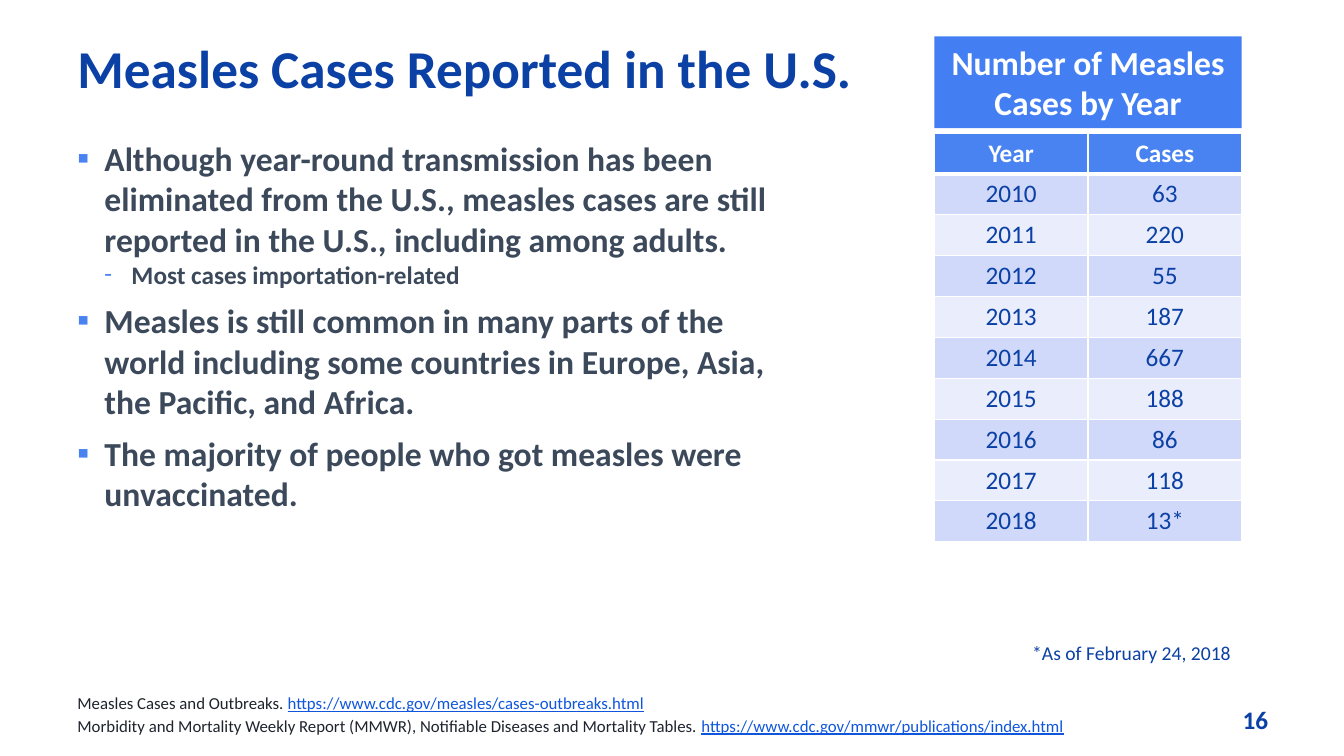
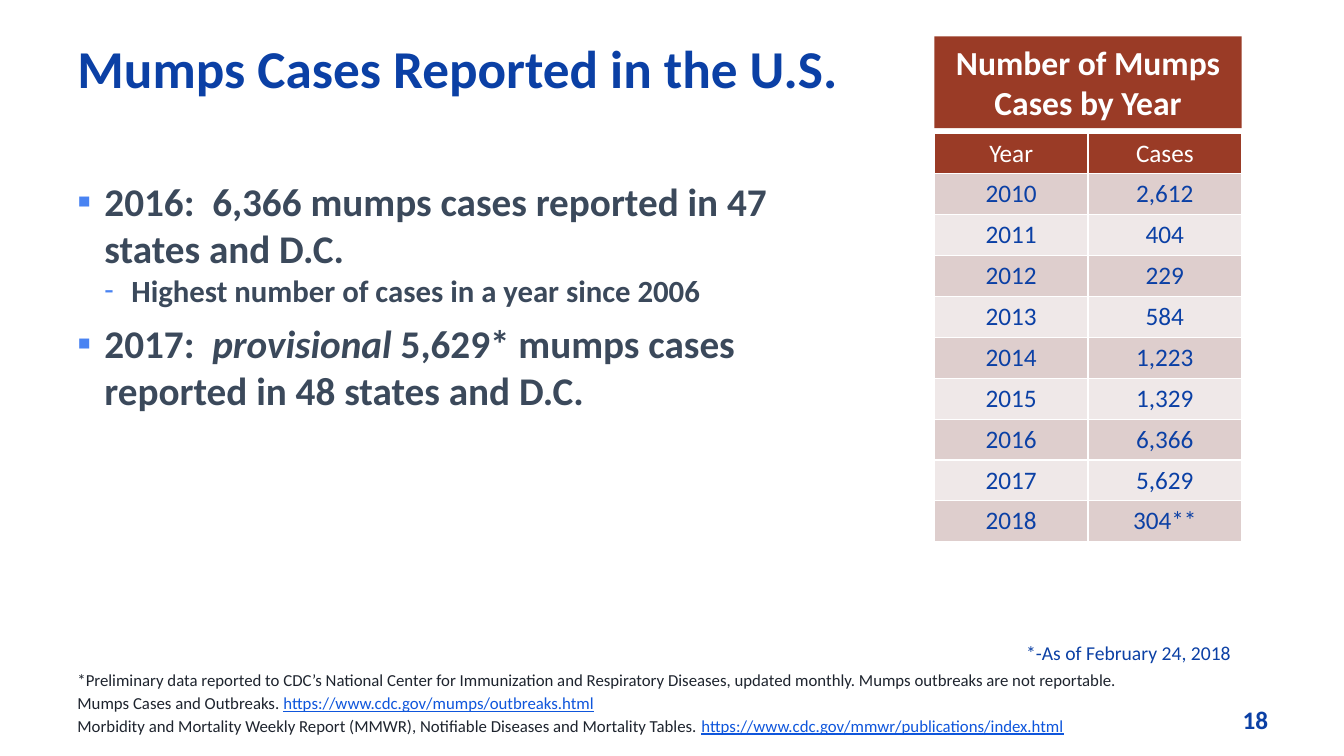
from dataclasses import dataclass

from lxml.etree import SubElement
from pptx import Presentation
from pptx.dml.color import RGBColor
from pptx.enum.shapes import MSO_SHAPE
from pptx.enum.text import MSO_ANCHOR, PP_ALIGN
from pptx.oxml import parse_xml
from pptx.oxml.ns import nsdecls, qn
from pptx.util import Pt

FONT = "Calibri"
WHITE = "FFFFFF"
NAVY = "0B40A5"
SLATE = "3B495B"
INK = "1E242E"
LINK = "0F56DC"
BULLET = "4983F2"

LEFT = 48.25
TABLE_LEFT, TABLE_TOP, TABLE_WIDTH, ROW_HEIGHT = 667.4, 95, 219.6, 29.2
BODY_BOTTOM = 459
INDENT = 19.3
FIRST_YEAR = 2010


@dataclass(frozen=True)
class Run:
    text: str
    italic: bool = False
    link: bool = False


@dataclass(frozen=True)
class Bullet:
    runs: tuple[Run, ...]
    size: float
    level: int = 0


@dataclass(frozen=True)
class TablePalette:
    banner: str
    header: str
    odd_row: str
    even_row: str
    header_bold: bool
    header_rule: float


@dataclass(frozen=True)
class DiseaseSlide:
    title: str
    body_top: float
    bullets: tuple[Bullet, ...]
    banner: str
    cases: tuple[str, ...]
    palette: TablePalette
    date_note: str
    sources: tuple[tuple[Run, ...], ...]
    number: int


def rgb(value: str) -> RGBColor:
    return RGBColor.from_string(value)


def write(paragraph, *runs: Run, size: float, color: str, bold=False,
          align=PP_ALIGN.LEFT, before: float = 0) -> None:
    """Fill a paragraph with runs; link runs are underlined in the link colour."""
    paragraph.alignment = align
    paragraph.space_before = Pt(before)
    for item in runs:
        run = paragraph.add_run()
        run.text = item.text
        font = run.font
        font.name, font.size = FONT, Pt(size)
        font.bold, font.italic, font.underline = bold, item.italic, item.link
        font.color.rgb = rgb(LINK if item.link else color)


def add_frame(slide, left: float, top: float, width: float, height: float,
              anchor=MSO_ANCHOR.TOP):
    box = slide.shapes.add_textbox(Pt(left), Pt(top), Pt(width), Pt(height))
    frame = box.text_frame
    frame.word_wrap = True
    frame.vertical_anchor = anchor
    return frame


def paragraph_at(frame, index: int):
    return frame.add_paragraph() if index else frame.paragraphs[0]


def set_bullet(paragraph, level: int) -> None:
    properties = paragraph._p.get_or_add_pPr()
    properties.set("marL", str(Pt(INDENT * (level + 1))))
    properties.set("indent", str(Pt(-INDENT)))
    color = SubElement(properties, qn("a:buClr"))
    SubElement(color, qn("a:srgbClr")).set("val", BULLET)
    SubElement(properties, qn("a:buFont")).set("typeface", FONT)
    SubElement(properties, qn("a:buChar")).set("char", "-" if level else "▪")


def add_bullets(slide, top: float, bullets: tuple[Bullet, ...]) -> None:
    frame = add_frame(slide, LEFT, top, 532.8, BODY_BOTTOM - top)
    for index, bullet in enumerate(bullets):
        paragraph = paragraph_at(frame, index)
        set_bullet(paragraph, bullet.level)
        paragraph.level = bullet.level
        before = 8 if index and not bullet.level else 0
        write(paragraph, *bullet.runs, size=bullet.size, color=SLATE,
              bold=True, before=before)


def add_sources(slide, sources: tuple[tuple[Run, ...], ...]) -> None:
    frame = add_frame(slide, LEFT, 486, 864, 43.2, MSO_ANCHOR.BOTTOM)
    for index, runs in enumerate(sources):
        write(paragraph_at(frame, index), *runs, size=12, color=INK,
              before=2 if index else 0)


def set_borders(cell, top: float, bottom: float) -> None:
    properties = cell._tc.get_or_add_tcPr()
    widths = {"lnL": 1, "lnR": 1, "lnT": top, "lnB": bottom}
    for position, (side, width) in enumerate(widths.items()):
        properties.insert(position, parse_xml(
            f'<a:{side} {nsdecls("a")} w="{Pt(width)}"><a:solidFill>'
            f'<a:srgbClr val="{WHITE}"/></a:solidFill></a:{side}>'))


def add_case_table(slide, cases: tuple[str, ...], palette: TablePalette) -> None:
    rows = [("Year", "Cases")]
    rows += [(str(FIRST_YEAR + index), count) for index, count in enumerate(cases)]
    table = slide.shapes.add_table(
        len(rows), 2, Pt(TABLE_LEFT), Pt(TABLE_TOP), Pt(TABLE_WIDTH),
        Pt(ROW_HEIGHT * len(rows))).table
    for row_index, values in enumerate(rows):
        table.rows[row_index].height = Pt(ROW_HEIGHT)
        is_header = row_index == 0
        band = palette.odd_row if row_index % 2 else palette.even_row
        for column_index, value in enumerate(values):
            cell = table.cell(row_index, column_index)
            cell.fill.solid()
            cell.fill.fore_color.rgb = rgb(palette.header if is_header else band)
            set_borders(cell,
                        top=palette.header_rule if row_index == 1 else 1,
                        bottom=palette.header_rule if is_header else 1)
            write(cell.text_frame.paragraphs[0], Run(value), size=18,
                  color=WHITE if is_header else NAVY,
                  bold=is_header and palette.header_bold,
                  align=PP_ALIGN.CENTER)


def add_banner(slide, text: str, fill: str) -> None:
    shape = slide.shapes.add_shape(MSO_SHAPE.RECTANGLE, Pt(TABLE_LEFT), Pt(26),
                                   Pt(TABLE_WIDTH), Pt(65.5))
    shape.shadow.inherit = False
    shape.fill.solid()
    shape.fill.fore_color.rgb = rgb(fill)
    shape.line.fill.background()
    frame = shape.text_frame
    frame.word_wrap = True
    frame.vertical_anchor = MSO_ANCHOR.MIDDLE
    write(frame.paragraphs[0], Run(text), size=24, color=WHITE, bold=True,
          align=PP_ALIGN.CENTER)


def build_slide(presentation, content: DiseaseSlide) -> None:
    slide = presentation.slides.add_slide(presentation.slide_layouts[6])
    add_bullets(slide, content.body_top, content.bullets)
    title = add_frame(slide, LEFT, 21.6, 610, 60)
    write(title.paragraphs[0], Run(content.title), size=38, color=NAVY, bold=True)
    add_sources(slide, content.sources)
    number = add_frame(slide, 880.5, 499.7, 70, 29)
    write(number.paragraphs[0], Run(str(content.number)), size=18, color=NAVY,
          bold=True)
    add_case_table(slide, content.cases, content.palette)
    add_banner(slide, content.banner, content.palette.banner)
    note = add_frame(slide, 674, 454.3, 212.4, 24.5)
    write(note.paragraphs[0], Run(content.date_note), size=14, color=NAVY,
          align=PP_ALIGN.RIGHT)


WEEKLY_REPORT = (
    Run("Morbidity and Mortality Weekly Report (MMWR), Notifiable Diseases and "
        "Mortality Tables. "),
    Run("https://www.cdc.gov/mmwr/publications/index.html", link=True),
)

MEASLES = DiseaseSlide(
    title="Measles Cases Reported in the U.S.",
    body_top=95,
    bullets=(
        Bullet((Run("Although year-round transmission has been eliminated from "
                    "the U.S., measles cases are still reported in the U.S., "
                    "including among adults."),), 24),
        Bullet((Run("Most cases importation-related"),), 18, level=1),
        Bullet((Run("Measles is still common in many parts of the world including "
                    "some countries in Europe, Asia, the Pacific, and Africa."),), 24),
        Bullet((Run("The majority of people who got measles were unvaccinated."),), 24),
    ),
    banner="Number of Measles Cases by Year",
    cases=("63", "220", "55", "187", "667", "188", "86", "118", "13*"),
    palette=TablePalette("437FF2", "4983F2", "D0D9FA", "E9EDFC",
                         header_bold=True, header_rule=3),
    date_note="*As of February 24, 2018",
    sources=(
        (Run("Measles Cases and Outbreaks. "),
         Run("https://www.cdc.gov/measles/cases-outbreaks.html", link=True)),
        WEEKLY_REPORT,
    ),
    number=16,
)

MUMPS = DiseaseSlide(
    title="Mumps Cases Reported in the U.S.",
    body_top=123,
    bullets=(
        Bullet((Run("2016:  6,366 mumps cases reported in 47 states and D.C."),), 28),
        Bullet((Run("Highest number of cases in a year since 2006"),), 22, level=1),
        Bullet((Run("2017:  "), Run("provisional", italic=True),
                Run(" 5,629* mumps cases reported in 48 states and D.C.")), 28),
    ),
    banner="Number of Mumps Cases by Year",
    cases=("2,612", "404", "229", "584", "1,223", "1,329", "6,366", "5,629", "304**"),
    palette=TablePalette("9A3B26", "9A3B26", "DECECD", "EFE8E8",
                         header_bold=False, header_rule=1),
    date_note="*-As of February 24, 2018",
    sources=(
        (Run("*Preliminary data reported to CDC’s National Center for Immunization "
             "and Respiratory Diseases, updated monthly. Mumps outbreaks are not "
             "reportable."),),
        (Run("Mumps Cases and Outbreaks. "),
         Run("https://www.cdc.gov/mumps/outbreaks.html", link=True)),
        WEEKLY_REPORT,
    ),
    number=18,
)


def main() -> None:
    presentation = Presentation()
    presentation.slide_width, presentation.slide_height = Pt(960), Pt(540)
    for content in (MEASLES, MUMPS):
        build_slide(presentation, content)
    presentation.save("out.pptx")


if __name__ == "__main__":
    main()
